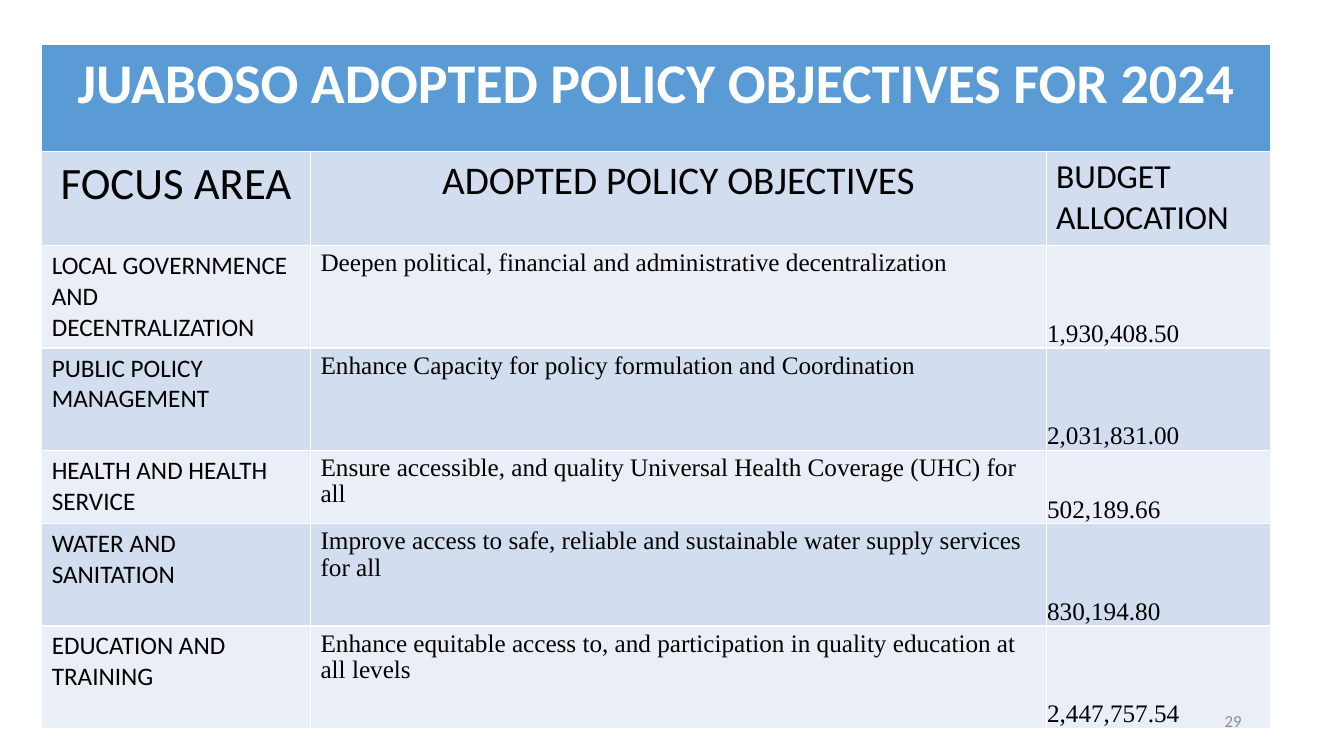
import pptx
import pptx.util
import pptx.dml.color
import pptx.enum.text

Pt = pptx.util.Pt
RGB = pptx.dml.color.RGBColor.from_string
ALIGN = pptx.enum.text.PP_ALIGN
ANCHOR = pptx.enum.text.MSO_ANCHOR


class Theme:
    sans, serif = "Calibri", "Times New Roman"
    head, odd, even = "5B9BD5", "D2DEEF", "EAEFF7"
    white, black, grey = "FFFFFF", "000000", "8C8C8C"
    title, focus, policy, budget, body, note = 40, 32, 28, 24, 18, 12


TITLE = "JUABOSO ADOPTED POLICY OBJECTIVES FOR 2024"
HEADS = ["FOCUS AREA", "ADOPTED POLICY OBJECTIVES", "BUDGET ALLOCATION"]
GOALS = [
    ("LOCAL GOVERNMENCE AND DECENTRALIZATION",
     "Deepen political, financial and administrative decentralization",
     "1,930,408.50"),
    ("PUBLIC POLICY MANAGEMENT",
     "Enhance Capacity for policy formulation and Coordination",
     "2,031,831.00"),
    ("HEALTH AND HEALTH SERVICE",
     "Ensure accessible, and quality Universal Health Coverage (UHC) for all",
     "502,189.66"),
    ("WATER AND SANITATION",
     "Improve access to safe, reliable and sustainable water supply services for all",
     "830,194.80"),
    ("EDUCATION AND TRAINING",
     "Enhance equitable access to, and participation in quality education at all levels",
     "2,447,757.54"),
]
WIDTHS = [192, 525.5, 160]
HEIGHTS = [76.5, 67, 73, 73, 52.5, 73, 73]


def assign(item, **values):
    for name, value in values.items():
        setattr(item, name, value)


def write(frame, text, size, face=Theme.sans, color=Theme.black,
          align=ALIGN.LEFT, bold=False, space=None):
    para = frame.paragraphs[0]
    assign(para, alignment=align, line_spacing=space)
    run = para.add_run()
    run.text = text
    assign(run.font, size=Pt(size), name=face, bold=bold)
    run.font.color.rgb = RGB(color)


def paint(cell, color):
    cell.fill.solid()
    cell.fill.fore_color.rgb = RGB(color)


def draw_table(slide, left, top, width, height):
    table = slide.shapes.add_table(
        len(HEIGHTS), len(WIDTHS), Pt(left), Pt(top), Pt(width), Pt(height)).table
    for col, size in zip(table.columns, WIDTHS):
        col.width = Pt(size)
    for row, size in zip(table.rows, HEIGHTS):
        row.height = Pt(size)

    banner = table.cell(0, 0)
    banner.merge(table.cell(0, len(WIDTHS) - 1))
    paint(banner, Theme.head)
    write(banner.text_frame, TITLE, Theme.title, color=Theme.white,
          align=ALIGN.CENTER, bold=True)

    sizes = [Theme.focus, Theme.policy, Theme.budget]
    sides = [ALIGN.CENTER, ALIGN.CENTER, ALIGN.LEFT]
    for col, (text, size, side) in enumerate(zip(HEADS, sizes, sides)):
        cell = table.cell(1, col)
        paint(cell, Theme.odd)
        write(cell.text_frame, text, size, align=side)

    styles = [dict(face=Theme.sans), dict(face=Theme.serif, space=0.95),
              dict(face=Theme.serif)]
    for row, goal in enumerate(GOALS, 2):
        for col, (text, style) in enumerate(zip(goal, styles)):
            cell = table.cell(row, col)
            paint(cell, Theme.odd if row % 2 else Theme.even)
            write(cell.text_frame, text, Theme.body, **style)
        assign(cell, vertical_anchor=ANCHOR.BOTTOM, margin_left=Pt(0.7),
               margin_right=Pt(0.7), margin_top=Pt(0.7), margin_bottom=Pt(0))


def draw_number(slide, left, top, width, height):
    box = slide.shapes.add_textbox(Pt(left), Pt(top), Pt(width), Pt(height))
    assign(box.text_frame, word_wrap=True, vertical_anchor=ANCHOR.MIDDLE)
    write(box.text_frame, "29", Theme.note, color=Theme.grey, align=ALIGN.RIGHT)


def main():
    deck = pptx.Presentation()
    assign(deck, slide_width=Pt(960), slide_height=Pt(540))
    slide = deck.slides.add_slide(deck.slide_layouts[6])
    draw_table(slide, 29.8, 32, sum(WIDTHS), sum(HEIGHTS))
    draw_number(slide, 678, 500.5, 216, 28.75)
    deck.save("out.pptx")


if __name__ == "__main__":
    main()
